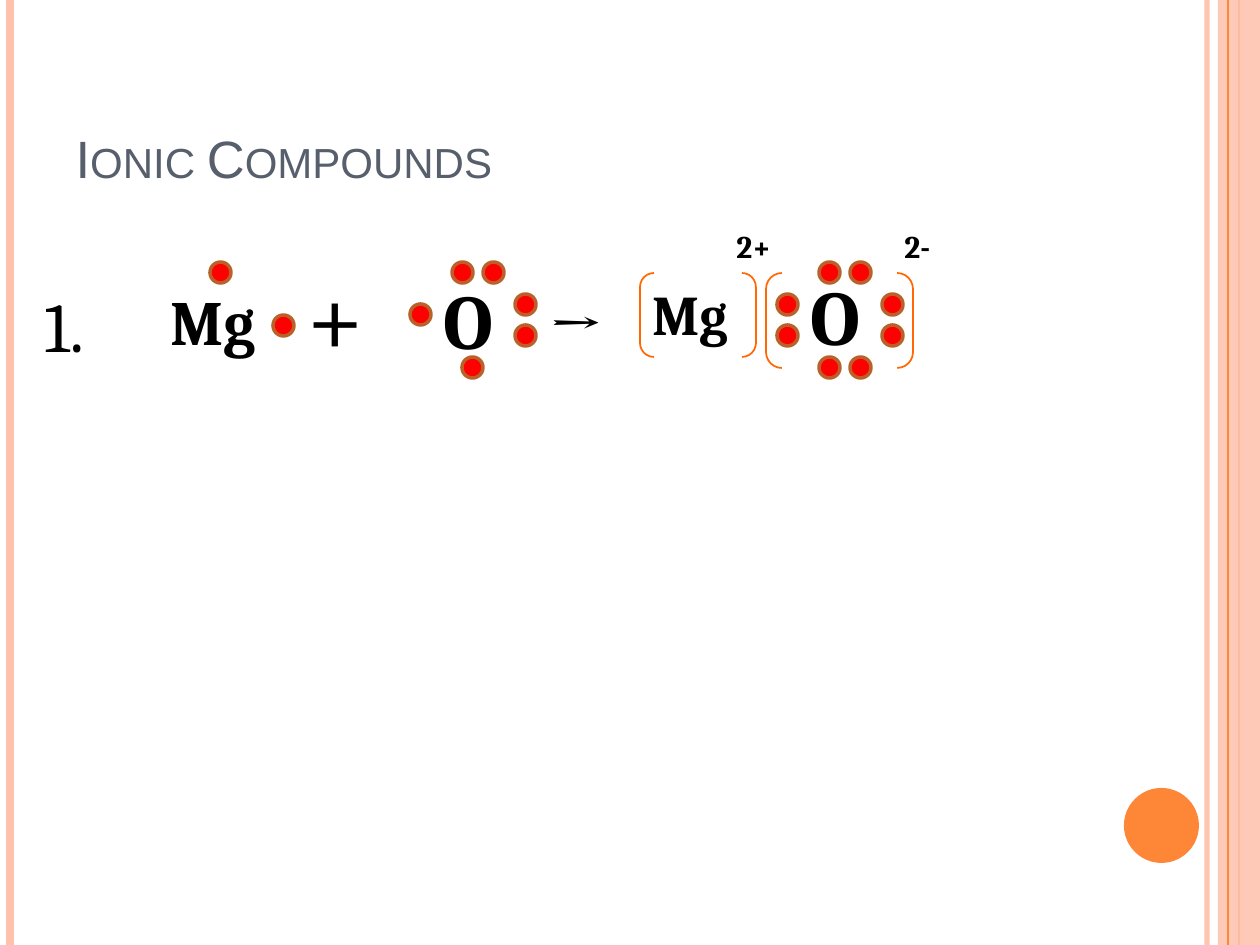
from dataclasses import dataclass

from lxml import etree
from pptx import Presentation
from pptx import util as u
from pptx.dml.color import RGBColor
from pptx.enum import shapes, text
from pptx.oxml.ns import qn

PX = u.Inches(1) / 126
WIDE, HIGH = 1260, 945
DOT = 21


@dataclass(frozen=True)
class Theme:
    head_font: str = "Arial"
    body_font: str = "Cambria"
    head: str = "575F6D"
    ink: str = "000000"
    pale: str = "FEC2AC"
    accent: str = "FE8637"
    hook: str = "FF6803"
    dot: str = "FF0000"
    rim: str = "B96128"
    title: int = 30
    charge: int = 18
    ion: int = 32
    atom: int = 36
    sign: int = 40
    oxygen: int = 44
    plus: int = 60


T = Theme()


def px(*vals):
    return [u.Emu(round(v * PX)) for v in vals]


def rgb(code):
    return RGBColor.from_string(code)


def fade(fill, pct):
    """Make a solid fill pct percent opaque."""
    color = fill._xPr.find(qn("a:solidFill"))[0]
    etree.SubElement(color, qn("a:alpha"), val=str(pct * 1000))


def add_shape(slide, kind, box, fill=None, line=None, width=1):
    shape = slide.shapes.add_shape(kind, *px(*box))
    shape.shadow.inherit = False
    if fill:
        shape.fill.solid()
        shape.fill.fore_color.rgb = rgb(fill)
    else:
        shape.fill.background()
    if line:
        shape.line.color.rgb = rgb(line)
        shape.line.width = u.Pt(width)
    else:
        shape.line.fill.background()
    return shape


def add_rule(slide, x, color, width):
    """Draw a vertical line down the whole slide."""
    rule = slide.shapes.add_connector(
        shapes.MSO_CONNECTOR.STRAIGHT, *px(x, 0, x, HIGH))
    rule.line.color.rgb = rgb(color)
    rule.line.width = u.Pt(width)
    etree.SubElement(rule._element.spPr, qn("a:effectLst"))
    return rule


def add_text(slide, box, words, size, bold=False):
    frame = slide.shapes.add_textbox(*px(*box)).text_frame
    frame.word_wrap = True
    frame.text = words
    font = frame.paragraphs[0].runs[0].font
    font.name, font.size, font.bold = T.body_font, u.Pt(size), bold
    font.color.rgb = rgb(T.ink)


def add_frame(slide):
    rule = add_rule(slide, 1207, T.pale, 3)
    fade(rule.line.fill, 93)
    add_rule(slide, 10, T.pale, 4.5)
    add_rule(slide, 1239, T.accent, 1.5)
    band = add_shape(slide, shapes.MSO_SHAPE.RECTANGLE,
                     (1218, 0, WIDE - 1218, HIGH), T.pale)
    fade(band.fill, 87)
    add_rule(slide, 1228, T.accent, 0.75)
    add_shape(slide, shapes.MSO_SHAPE.OVAL, (1124, 788, 75, 75), T.accent)


def set_title(slide, box, words):
    title = slide.shapes.title
    title.left, title.top, title.width, title.height = px(*box)
    frame = title.text_frame
    frame.text = words
    frame.auto_size = text.MSO_AUTO_SIZE.NONE
    frame.vertical_anchor = text.MSO_ANCHOR.BOTTOM
    line = frame.paragraphs[0]
    line.alignment = text.PP_ALIGN.LEFT
    font = line.runs[0].font
    font.name, font.size = T.head_font, u.Pt(T.title)
    font.color.rgb = rgb(T.head)
    font._element.set("cap", "small")


def add_atom(slide, x, y, label, size, inner, dots):
    """Place a symbol and its electron dots relative to x, y."""
    left, top, wide, high = inner
    add_text(slide, (x + left, y + top, wide, high), label, size, True)
    for dx, dy in dots:
        add_shape(slide, shapes.MSO_SHAPE.OVAL,
                  (x + dx, y + dy, DOT, DOT), T.dot, T.rim, 2)


def add_ion(slide, box, charge, shift):
    """Draw the brackets in box, with the charge shift px from its right."""
    x, y, wide, high = box
    add_shape(slide, shapes.MSO_SHAPE.DOUBLE_BRACKET, box, line=T.hook)
    add_text(slide, (x + wide + shift, y - 52, 73, 50),
             charge, T.charge, True)


def add_equation(slide, x, y):
    add_text(slide, (x, y + 14, 84, 97), "1.", T.sign)
    add_atom(slide, x + 126, y, "Mg", T.atom, (0, 14, 147, 89),
             [(52, 0), (115, 53)])
    add_text(slide, (x + 262, y - 18, 84, 140), "+", T.plus)

    pairs = [(42, 0), (73, 0), (105, 32), (105, 63)]
    add_atom(slide, x + 378, y, "O", T.oxygen, (21, 4, 84, 106),
             pairs + [(0, 42), (52, 95)])
    add_text(slide, (x + 504, y + 11, 95, 97), "→", T.sign)

    add_atom(slide, x + 608, y, "Mg", T.ion, (0, 11, 116, 81), [])
    add_ion(slide, (x + 608, y + 11, 116, 84), "2+", -32)
    add_atom(slide, x + 745, y, "O", T.oxygen, (21, 0, 84, 106),
             pairs + [(0, 32), (0, 63), (42, 95), (73, 95)])
    add_ion(slide, (x + 734, y + 11, 147, 95), "2-", -21)


def main():
    deck = Presentation()
    deck.slide_width, deck.slide_height = px(WIDE, HIGH)
    slide = deck.slides.add_slide(deck.slide_layouts[5])
    add_frame(slide)
    set_title(slide, (63, 38, 1029, 157), "Ionic Compounds")
    add_equation(slide, 32, 262)
    deck.save("out.pptx")


if __name__ == "__main__":
    main()
